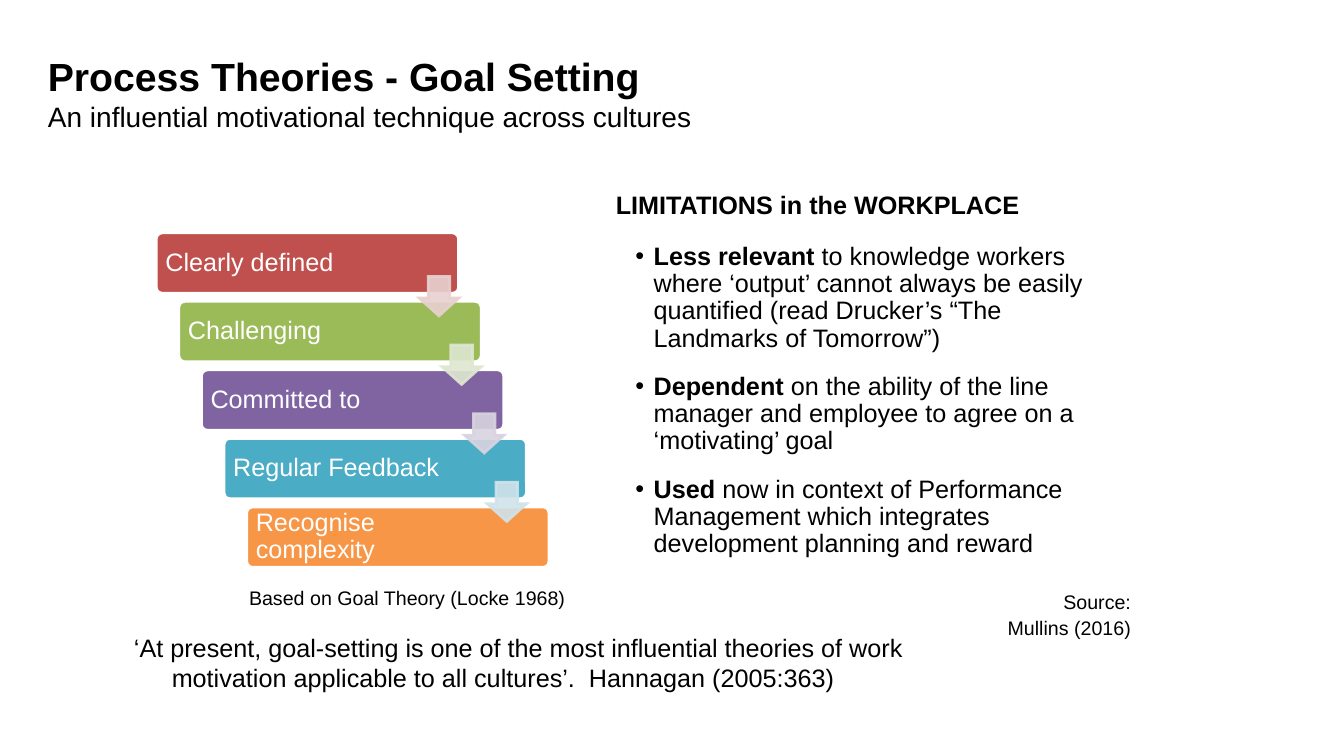
from dataclasses import dataclass

from lxml import etree
from pptx import Presentation
from pptx.dml.color import RGBColor
from pptx.enum.shapes import MSO_SHAPE
from pptx.enum.text import MSO_ANCHOR, MSO_AUTO_SIZE, PP_ALIGN
from pptx.oxml.ns import qn
from pptx.util import Pt

ROUNDED = MSO_SHAPE.ROUNDED_RECTANGLE
DOWN_ARROW = MSO_SHAPE.DOWN_ARROW
LEFT, RIGHT = PP_ALIGN.LEFT, PP_ALIGN.RIGHT
TOP, MIDDLE = MSO_ANCHOR.TOP, MSO_ANCHOR.MIDDLE
NO_FIT = MSO_AUTO_SIZE.NONE


@dataclass(frozen=True)
class Theme:
    font: str = "Arial"
    black: str = "000000"
    white: str = "FFFFFF"
    title: int = 28
    subtitle: int = 20
    body: int = 18
    small: int = 14
    tight: float = 0.9


THEME = Theme()

# label, bar colour, colour of the arrow leading to the next step
STEPS = [
    ("Clearly defined", "C0504D", "E8D0D0"),
    ("Challenging", "9BBB59", "DEE7D1"),
    ("Committed to", "8064A2", "D8D3E0"),
    ("Regular Feedback", "4BACC6", "D0E3EA"),
    ("Recognise complexity", "F79646", None),
]

LIMITATIONS = [
    ("Less relevant", " to knowledge workers where ‘output’ cannot always be easily "
                      "quantified (read Drucker’s “The Landmarks of Tomorrow”)"),
    ("Dependent", " on the ability of the line manager and employee to agree on a "
                  "‘motivating’ goal"),
    ("Used", " now in context of Performance Management which integrates "
             "development planning and reward"),
]


def place(sp, left, top, width, height):
    sp.left, sp.top, sp.width, sp.height = Pt(left), Pt(top), Pt(width), Pt(height)


def add_run(p, text, size, color=THEME.black, bold=False):
    r = p.add_run()
    r.text = text
    r.font.name = THEME.font
    r.font.size = Pt(size)
    r.font.bold = bold
    r.font.color.rgb = RGBColor.from_string(color)


def set_indent(p, margin, first, bullet=None):
    pPr = p._p.get_or_add_pPr()
    pPr.set("marL", str(Pt(margin)))
    pPr.set("indent", str(Pt(first)))
    if bullet:
        etree.SubElement(pPr, qn("a:buChar")).set("char", bullet)
    else:
        etree.SubElement(pPr, qn("a:buNone"))


def prepare_frame(sp, anchor=TOP):
    tf = sp.text_frame
    tf.word_wrap = True
    tf.auto_size = NO_FIT
    tf.vertical_anchor = anchor
    return tf


def add_title(slide, left, top, width, height):
    sp = slide.shapes.title
    place(sp, left, top, width, height)
    p = prepare_frame(sp).paragraphs[0]
    p.alignment = LEFT
    add_run(p, "Process Theories - Goal Setting", THEME.title, bold=True)
    p.add_line_break()
    add_run(p, "An influential motivational technique across cultures", THEME.subtitle)


def add_limitations(slide, left, top, width, height):
    sp = slide.placeholders[1]
    place(sp, left, top, width, height)
    tf = prepare_frame(sp)
    p = tf.paragraphs[0]
    set_indent(p, 0, 0)
    p.space_before = Pt(0)
    p.line_spacing = THEME.tight
    add_run(p, "LIMITATIONS in the WORKPLACE", THEME.body, bold=True)
    for i, (lead, rest) in enumerate(LIMITATIONS):
        p = tf.add_paragraph()
        set_indent(p, 27, -13, "•")
        p.space_before = Pt(15 if i else 17)
        p.line_spacing = THEME.tight
        add_run(p, lead, THEME.body, bold=True)
        add_run(p, rest, THEME.body)


def add_shape(slide, preset, box, fill, line):
    sp = slide.shapes.add_shape(preset, *(Pt(v) for v in box))
    sp.shadow.inherit = False
    sp.fill.solid()
    sp.fill.fore_color.rgb = RGBColor.from_string(fill)
    sp.line.color.rgb = RGBColor.from_string(line)
    sp.line.width = Pt(2)
    return sp


def add_step(slide, left, top, width, height, label, color):
    sp = add_shape(slide, ROUNDED, (left, top, width, height), color, THEME.white)
    sp.adjustments[0] = 0.1
    tf = prepare_frame(sp, MIDDLE)
    tf.margin_left, tf.margin_right = Pt(5.3), Pt(50)
    tf.margin_top = tf.margin_bottom = Pt(0)
    p = tf.paragraphs[0]
    p.alignment = LEFT
    p.line_spacing = THEME.tight
    add_run(p, label, THEME.body, THEME.white)


def add_step_arrow(slide, left, top, size, color):
    """Draw a slightly transparent arrow with sharp corners."""
    sp = add_shape(slide, DOWN_ARROW, (left, top, size, size), color, color)
    sp.adjustments[0], sp.adjustments[1] = 0.55, 0.45
    spPr = sp._element.spPr
    for clr in spPr.iter(qn("a:srgbClr")):
        etree.SubElement(clr, qn("a:alpha")).set("val", "90000")
    miter = etree.SubElement(spPr.find(qn("a:ln")), qn("a:miter"))
    miter.set("lim", "800000")


def add_staircase(slide, left, top, width, height):
    """Fill the box with equal bars stepping down to the right, then the arrows."""
    bar_w, bar_h = 216, 43.2
    gaps = len(STEPS) - 1
    dx, dy = (width - bar_w) / gaps, (height - bar_h) / gaps
    for i, (label, color, _) in enumerate(STEPS):
        add_step(slide, left + i * dx, top + i * dy, bar_w, bar_h, label, color)
    for i, (_, _, color) in enumerate(STEPS[:-1]):
        add_step_arrow(slide, left + i * dx + 188, top + i * dy + 31.3, 28, color)


def add_note(slide, left, top, width, height, lines, size, align=LEFT,
             spacing=1.0, hanging=0):
    sp = slide.shapes.add_textbox(Pt(left), Pt(top), Pt(width), Pt(height))
    tf = prepare_frame(sp)
    for i, line in enumerate(lines):
        p = tf.add_paragraph() if i else tf.paragraphs[0]
        set_indent(p, hanging, -hanging)
        p.alignment = align
        p.line_spacing = spacing
        p.space_before = Pt(2.8 if i else 0)
        add_run(p, line, size)


def build_goal_setting(prs):
    slide = prs.slides.add_slide(prs.slide_layouts[1])
    add_title(slide, 27, 34, 698, 76)
    add_limitations(slide, 432.7, 134, 382.3, 280)
    add_staircase(slide, 111.6, 166.3, 280.6, 239)
    add_note(slide, 170.6, 414.7, 240.5, 24.5,
             ["Based on Goal Theory (Locke 1968)"], THEME.small, RIGHT)
    add_note(slide, 695, 420, 120, 42, ["Source:", "Mullins (2016)"],
             THEME.small, RIGHT, THEME.tight)
    add_note(slide, 88.6, 448, 577.4, 54,
             ["‘At present, goal-setting is one of the most influential theories of "
              "work motivation applicable to all cultures’.  Hannagan (2005:363)"],
             THEME.body, hanging=27)


def main():
    prs = Presentation()
    prs.slide_width, prs.slide_height = Pt(960), Pt(540)
    build_goal_setting(prs)
    prs.save("out.pptx")


if __name__ == "__main__":
    main()
